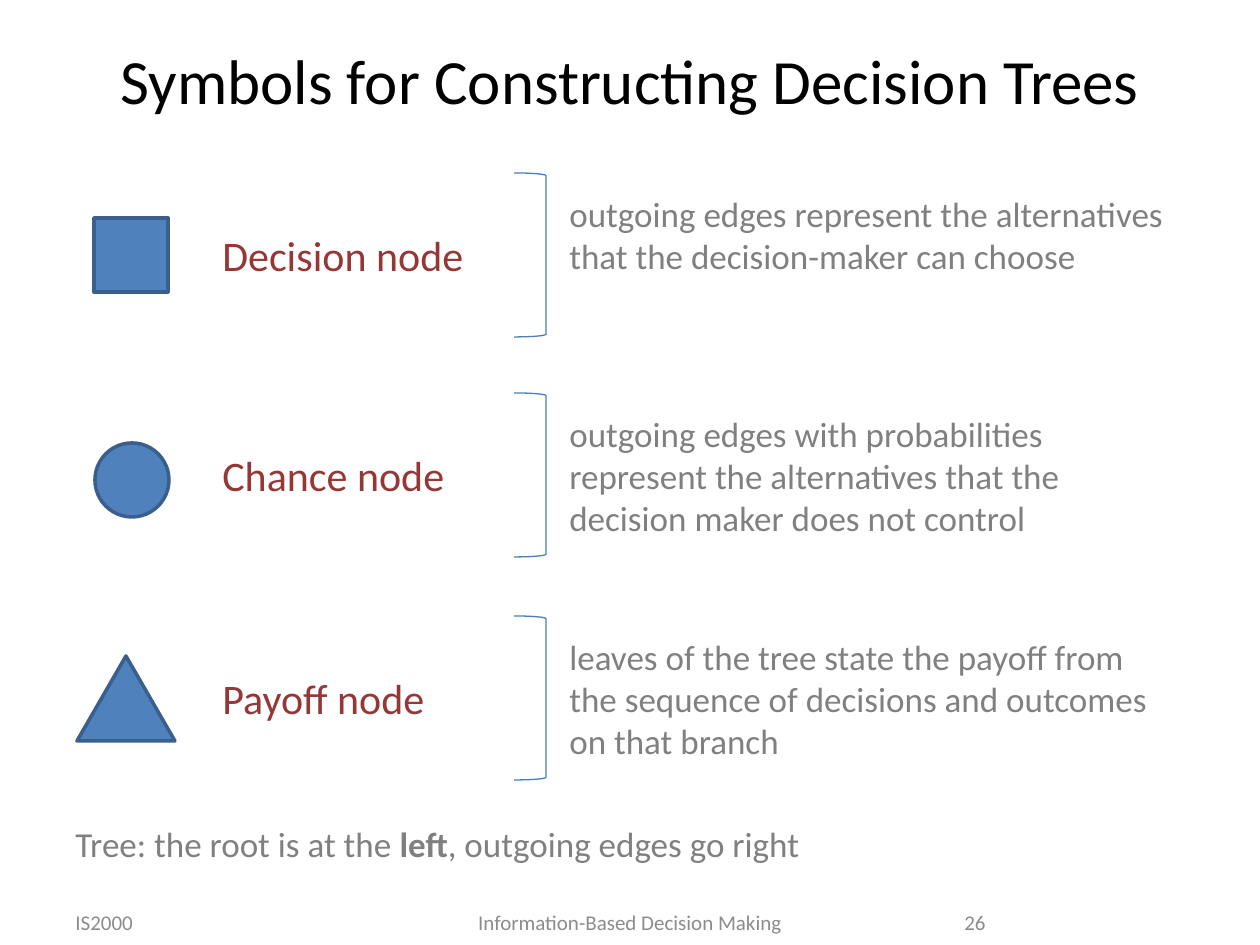
from pptx import Presentation
from pptx.dml.color import RGBColor
from pptx.enum.shapes import MSO_SHAPE
from pptx.enum.text import MSO_ANCHOR, PP_ALIGN
from pptx.util import Pt

PX = 914400 / 126
COLORS = {
    "title": "000000",
    "label": "953735",
    "body": "808080",
    "footer": "8C8C8C",
    "symbol": "4F81BD",
    "outline": "3A5F8C",
    "bracket": "4B7EBC",
}
SIZES = {"title": 36, "label": 24, "body": 20, "footer": 12}


def add_text(bounds, style, parts, align=PP_ALIGN.LEFT, anchor=MSO_ANCHOR.TOP):
    """Add a one-paragraph box; parts are (text, bold) pairs."""
    box = page.shapes.add_textbox(*[round(v * PX) for v in bounds])
    frame = box.text_frame
    for name, value in {"word_wrap": True, "vertical_anchor": anchor}.items():
        setattr(frame, name, value)
    paragraph = frame.paragraphs[0]
    paragraph.alignment = align
    for text, bold in parts:
        span = paragraph.add_run()
        span.text = text
        font_format = {"name": "Calibri", "size": Pt(SIZES[style]), "bold": bold}
        for name, value in font_format.items():
            setattr(span.font, name, value)
        span.font.color.rgb = RGBColor.from_string(COLORS[style])


def add_outline(kind, bounds, line_color, width, fill_color=None):
    shape = page.shapes.add_shape(kind, *[round(v * PX) for v in bounds])
    shape.shadow.inherit = False
    if fill_color:
        shape.fill.solid()
        shape.fill.fore_color.rgb = RGBColor.from_string(COLORS[fill_color])
    else:
        shape.fill.background()
    shape.line.color.rgb = RGBColor.from_string(COLORS[line_color])
    shape.line.width = Pt(width)


deck = Presentation()
deck.slide_width = round(1260 * PX)
deck.slide_height = round(945 * PX)
page = deck.slides.add_slide(deck.slide_layouts[6])

# Title
add_text((63, 0, 1134, 158), "title",
         [("Symbols for Constructing Decision Trees", False)],
         PP_ALIGN.CENTER, MSO_ANCHOR.MIDDLE)

# One row per node type: row top, symbol, symbol bounds, label, description
rows = [
    (173, MSO_SHAPE.RECTANGLE, (94, 218, 74, 74), "Decision node",
     "outgoing edges represent the alternatives that the decision-maker can choose"),
    (393, MSO_SHAPE.OVAL, (95, 443, 74, 74), "Chance node",
     "outgoing edges with probabilities represent the alternatives "
     "that the decision maker does not control"),
    (616, MSO_SHAPE.ISOSCELES_TRIANGLE, (77, 656, 98, 85), "Payoff node",
     "leaves of the tree state the payoff from the sequence of decisions "
     "and outcomes on that branch"),
]
for top, symbol, bounds, label, description in rows:
    add_outline(symbol, bounds, "outline", 2, "symbol")
    add_text((210, top + 50, 368, 63), "label", [(label, False)])
    add_text((557, top + 13, 630, 140), "body", [(description, False)])
    add_outline(MSO_SHAPE.RIGHT_BRACKET, (514, top, 32, 164), "bracket", 0.75)

# Closing remark
add_text((63, 816, 872, 55), "body",
         [("Tree: the root is at the ", False), ("left", True),
          (", outgoing edges go right", False)])

# Footer
footers = [
    (63, 294, "IS2000", PP_ALIGN.LEFT),
    (387, 486, "Information-Based Decision Making", PP_ALIGN.CENTER),
    (903, 95, "26", PP_ALIGN.RIGHT),
]
for left, width, text, align in footers:
    add_text((left, 903, width, 39), "footer", [(text, False)],
             align, MSO_ANCHOR.MIDDLE)

deck.save("out.pptx")
